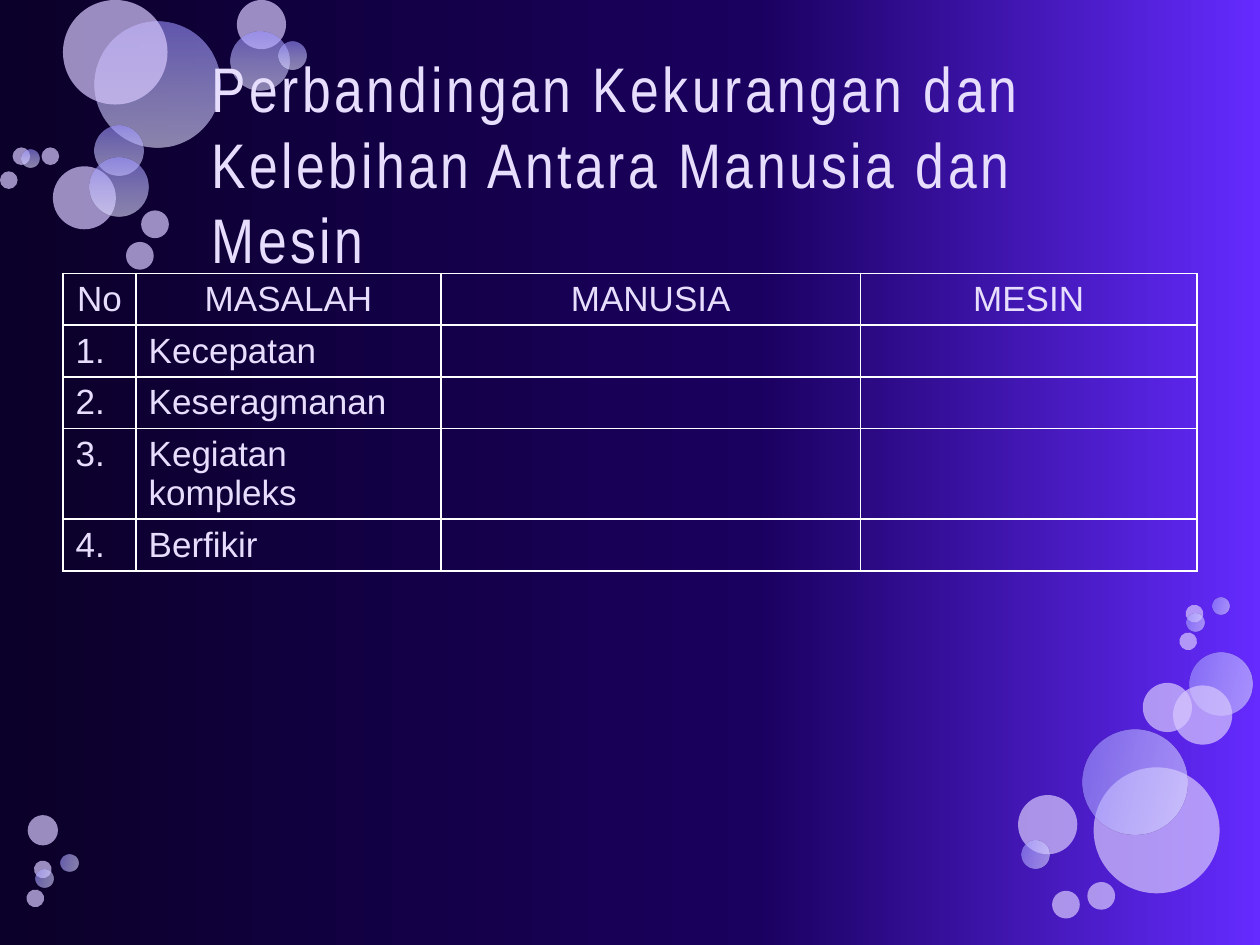
import pptx
import pptx.util
import pptx.dml.color
import pptx.enum.shapes
import pptx.enum.text
import pptx.oxml
import pptx.oxml.ns
from pptx.util import Inches

COLORS = {
    "night": "0B0029", "indigo": "1A005F", "violet": "652BFF",
    "glass_top": "9890FF", "glass_middle": "BFBBFF", "glass_bottom": "E0DEFF",
    "lilac": "D7C8FE", "text": "E7DEFE", "border": "FFFFFF",
}
NAMESPACE = 'xmlns:a="http://schemas.openxmlformats.org/drawingml/2006/main"'
ALIGN = pptx.enum.text.PP_ALIGN
BACKGROUND_STOPS = [(0, "night"), (60, "indigo"), (100, "violet")]
GLASS_STOPS = [(0, "glass_top"), (50, "glass_middle"), (100, "glass_bottom")]

# Bubbles: left and top inside the cluster box, diameter, whether glassy
TOP_LEFT_BUBBLES = [
    (0.75, 0.17, 1, True), (0.42, 1.32, 0.5, False), (0.75, 1, 0.39, True),
    (0.71, 1.25, 0.47, True), (0.5, 0, 0.83, False), (1.88, 0, 0.39, False),
    (1.83, 0.25, 0.47, True), (2.21, 0.33, 0.22, True), (1.12, 1.67, 0.22, False),
    (0.1, 1.17, 0.14, False), (1, 1.92, 0.22, False), (0, 1.36, 0.14, False),
    (0.17, 1.19, 0.14, True), (0.33, 1.17, 0.14, False),
]
BOTTOM_RIGHT_BUBBLES = [
    (0.68, 1.39, 1, False), (1.44, 0.48, 0.5, True), (1.07, 0.72, 0.39, False),
    (1.31, 0.74, 0.47, False), (0.59, 1.09, 0.83, True), (0.08, 1.61, 0.47, False),
    (0.11, 1.97, 0.22, True), (0.35, 2.37, 0.22, False), (1.41, 0.1, 0.14, False),
    (0.63, 2.3, 0.22, False), (1.62, 0.04, 0.14, True), (1.42, 0.17, 0.14, True),
    (1.36, 0.32, 0.14, False),
]
BOTTOM_LEFT_BUBBLES = [
    (0.02, 0.07, 0.24, False), (0.07, 0.43, 0.14, False), (0.28, 0.38, 0.14, True),
    (0.08, 0.5, 0.14, True), (0.01, 0.66, 0.14, False),
]

TABLE_ROWS = [
    ("No", "MASALAH", "MANUSIA", "MESIN"),
    ("1.", "Kecepatan", "", ""),
    ("2.", "Keseragmanan", "", ""),
    ("3.", "Kegiatan kompleks", "", ""),
    ("4.", "Berfikir", "", ""),
]
COLUMN_WIDTHS = [0.58, 2.42, 3.33, 2.67]


def rgb(name):
    return pptx.dml.color.RGBColor.from_string(COLORS[name])


def write_text(frame, text, size=20, font="Arial", align=ALIGN.LEFT, spacing=0):
    paragraph = frame.paragraphs[0]
    paragraph.alignment = align
    run = paragraph.add_run()
    run.text = text
    run.font.size = pptx.util.Pt(size)
    run.font.name = font
    run.font.color.rgb = rgb("text")
    if spacing:
        run.font._element.set("spc", str(spacing * 100))


def fill_gradient(fill, parent, stops, angle, opacity=100):
    """Replace a solid fill with a linear gradient."""
    fill.solid()
    stop_xml = "".join(
        f'<a:gs pos="{position * 1000}"><a:srgbClr val="{COLORS[name]}">'
        f'<a:alpha val="{opacity * 1000}"/></a:srgbClr></a:gs>'
        for position, name in stops)
    gradient = pptx.oxml.parse_xml(
        f'<a:gradFill {NAMESPACE} rotWithShape="1"><a:gsLst>{stop_xml}</a:gsLst>'
        f'<a:lin ang="{angle * 60000}" scaled="0"/></a:gradFill>')
    solid = parent.find(pptx.oxml.ns.qn("a:solidFill"))
    parent.replace(solid, gradient)


def add_background(slide):
    fill = slide.background.fill
    fill.solid()
    properties = slide.element.find(".//" + pptx.oxml.ns.qn("p:bgPr"))
    fill_gradient(fill, properties, BACKGROUND_STOPS, 0)


def add_bubbles(slide, left, top, bubbles, turned=False):
    for x, y, diameter, glassy in bubbles:
        shape = slide.shapes.add_shape(
            pptx.enum.shapes.MSO_SHAPE.OVAL, left + Inches(x), top + Inches(y),
            Inches(diameter), Inches(diameter))
        shape.shadow.inherit = False
        shape.line.fill.background()
        properties = shape.element.spPr
        if glassy:
            fill_gradient(shape.fill, properties, GLASS_STOPS, 90, opacity=60)
        else:
            shape.fill.solid()
            shape.fill.fore_color.rgb = rgb("lilac")
            color = properties.find(".//" + pptx.oxml.ns.qn("a:srgbClr"))
            color.append(pptx.oxml.parse_xml(f'<a:alpha {NAMESPACE} val="70000"/>'))
        if turned:
            shape.rotation = 103.3
            properties.find(pptx.oxml.ns.qn("a:xfrm")).set("flipV", "1")


def add_title(slide, left, top, width, height):
    title = slide.shapes.title
    title.left, title.top, title.width, title.height = left, top, width, height
    frame = title.text_frame
    frame.word_wrap = True
    frame.auto_size = pptx.enum.text.MSO_AUTO_SIZE.NONE
    frame.vertical_anchor = pptx.enum.text.MSO_ANCHOR.MIDDLE
    write_text(frame, "Perbandingan Kekurangan dan Kelebihan Antara Manusia dan Mesin",
               size=36, font="Arial Narrow", spacing=2)
    # Bring the title in front of the bubbles
    title.element.getparent().append(title.element)


def format_cell(cell):
    properties = cell._tc.get_or_add_tcPr()
    for side in ("lnL", "lnR", "lnT", "lnB"):
        properties.append(pptx.oxml.parse_xml(
            f'<a:{side} {NAMESPACE} w="12700"><a:solidFill>'
            f'<a:srgbClr val="{COLORS["border"]}"/></a:solidFill></a:{side}>'))
    cell.fill.background()


def add_comparison_table(slide, left, top, width, height):
    table = slide.shapes.add_table(
        len(TABLE_ROWS), len(COLUMN_WIDTHS), left, top, width, height).table
    table.first_row = False
    table.horz_banding = False
    for column, column_width in zip(table.columns, COLUMN_WIDTHS):
        column.width = Inches(column_width)
    for row_index, texts in enumerate(TABLE_ROWS):
        table.rows[row_index].height = Inches(0.41)
        for column_index, text in enumerate(texts):
            cell = table.cell(row_index, column_index)
            format_cell(cell)
            if text:
                align = ALIGN.CENTER if row_index == 0 else ALIGN.LEFT
                write_text(cell.text_frame, text, align=align)


def main():
    presentation = pptx.Presentation()
    presentation.slide_width = Inches(10)
    presentation.slide_height = Inches(7.5)
    slide = presentation.slides.add_slide(presentation.slide_layouts[5])

    # Backdrop
    add_background(slide)
    add_bubbles(slide, Inches(0), Inches(0), TOP_LEFT_BUBBLES)
    add_bubbles(slide, Inches(8), Inches(4.7), BOTTOM_RIGHT_BUBBLES, turned=True)
    add_bubbles(slide, Inches(0.2), Inches(6.4), BOTTOM_LEFT_BUBBLES, turned=True)

    # Content
    add_title(slide, Inches(1.58), Inches(0.67), Inches(7.25), Inches(1.25))
    add_comparison_table(slide, Inches(0.5), Inches(2.17), Inches(9), Inches(2.05))

    presentation.save("out.pptx")


if __name__ == "__main__":
    main()
